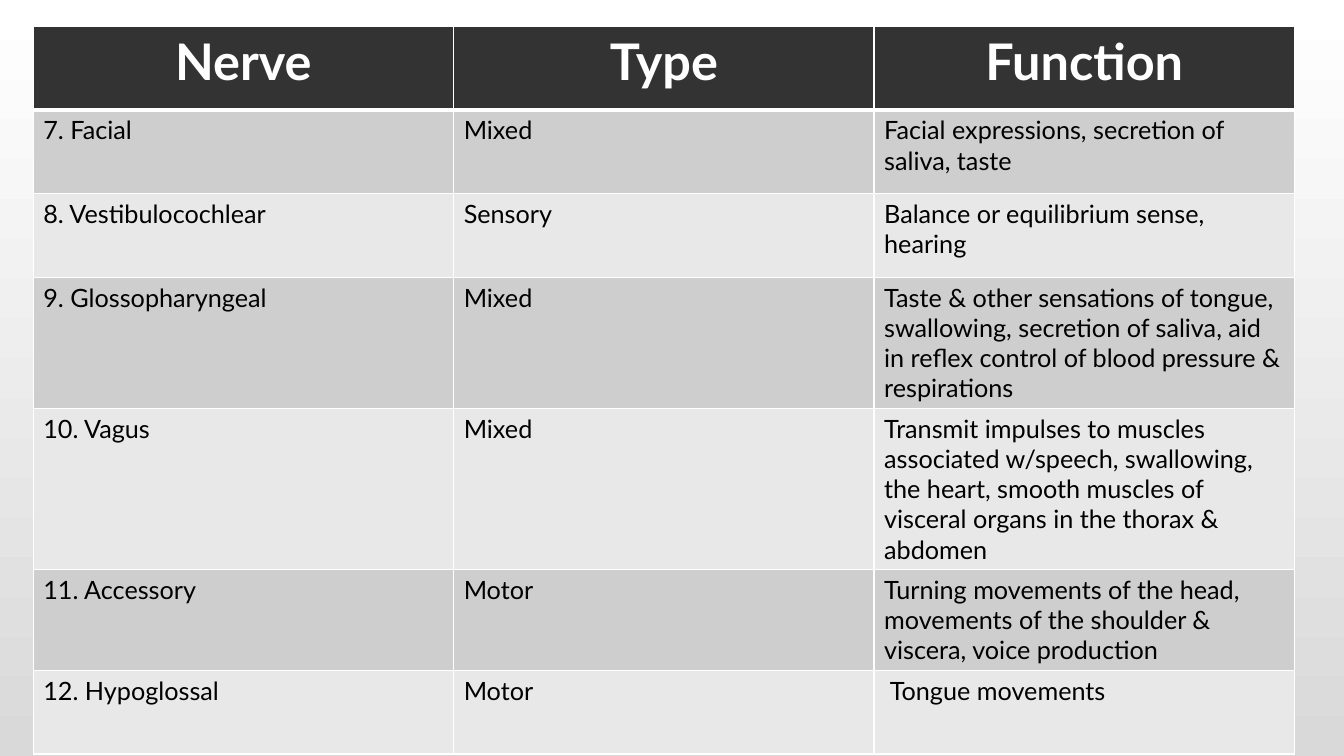
from dataclasses import dataclass

from pptx import Presentation
from pptx.dml.color import RGBColor
from pptx.enum.text import PP_ALIGN as Align
from pptx.oxml.ns import qn
from pptx.slide import Slide
from pptx.table import _Cell as Cell
from pptx.util import Inches, Pt
from lxml.etree import SubElement

COLORS = {
    "header": "333333",
    "odd_row": "CECECE",
    "even_row": "E8E8E8",
    "rule": "FFFFFF",
    "header_text": "FFFFFF",
    "body_text": "000000",
    "background_low": "D9D9D9",
    "background_high": "FFFFFF",
}
FONT = "Lato"
COLUMN_WIDTH = 4.17
HEADER_HEIGHT = 0.83
HEADINGS = ("Nerve", "Type", "Function")


@dataclass(frozen=True)
class Nerve:
    name: str
    kind: str
    function: str
    height: float = 0.83


@dataclass(frozen=True)
class CellStyle:
    fill: str
    text: str
    size: int
    bold: bool
    align: Align
    rules: dict[str, int]  # border tag to width in points


NERVES = (
    Nerve("7. Facial", "Mixed", "Facial expressions, secretion of saliva, taste"),
    Nerve("8. Vestibulocochlear", "Sensory", "Balance or equilibrium sense, hearing"),
    Nerve("9. Glossopharyngeal", "Mixed",
          "Taste & other sensations of tongue, swallowing, secretion of saliva, "
          "aid in reflex control of blood pressure & respirations", 1.2),
    Nerve("10. Vagus", "Mixed",
          "Transmit impulses to muscles associated w/speech, swallowing, the heart, "
          "smooth muscles of visceral organs in the thorax & abdomen", 1.48),
    Nerve("11. Accessory", "Motor",
          "Turning movements of the head, movements of the shoulder & viscera, "
          "voice production", 0.93),
    Nerve("12. Hypoglossal", "Motor", " Tongue movements"),
)

HEADER_STYLE = CellStyle("header", "header_text", 36, True, Align.CENTER,
                         {"lnL": 1, "lnR": 1, "lnT": 1, "lnB": 3})


def body_style(row: int) -> CellStyle:
    """Banded fill; the first body row shares the thick rule under the header."""
    return CellStyle("odd_row" if row % 2 else "even_row", "body_text", 18, False,
                     Align.LEFT, {"lnL": 1, "lnR": 1, "lnT": 3 if row == 1 else 1, "lnB": 1})


def rgb(name: str) -> RGBColor:
    return RGBColor.from_string(COLORS[name])


def paint_background(slide: Slide) -> None:
    fill = slide.background.fill
    fill.gradient()
    fill.gradient_angle = 90
    for stop, name in zip(fill.gradient_stops, ("background_low", "background_high")):
        stop.color.rgb = rgb(name)


def write_cell(cell: Cell, text: str, style: CellStyle) -> None:
    # Borders come before the fill in the cell properties
    properties = cell._tc.get_or_add_tcPr()
    for tag, width in style.rules.items():
        rule = SubElement(properties, qn(f"a:{tag}"), w=str(Pt(width)))
        solid = SubElement(rule, qn("a:solidFill"))
        SubElement(solid, qn("a:srgbClr"), val=COLORS["rule"])
    cell.fill.solid()
    cell.fill.fore_color.rgb = rgb(style.fill)

    paragraph = cell.text_frame.paragraphs[0]
    paragraph.alignment = style.align
    run = paragraph.add_run()
    run.text = text
    run.font.name = FONT
    run.font.size = Pt(style.size)
    run.font.bold = style.bold
    run.font.color.rgb = rgb(style.text)


def add_nerve_table(slide: Slide) -> None:
    heights = [HEADER_HEIGHT, *(nerve.height for nerve in NERVES)]
    table = slide.shapes.add_table(
        len(heights), len(HEADINGS), Inches(0.33), Inches(0.26),
        Inches(COLUMN_WIDTH * len(HEADINGS)), Inches(sum(heights))).table
    for column in table.columns:
        column.width = Inches(COLUMN_WIDTH)
    for row, height in zip(table.rows, heights):
        row.height = Inches(height)

    # Header row
    for cell, heading in zip(table.rows[0].cells, HEADINGS):
        write_cell(cell, heading, HEADER_STYLE)

    # One row per nerve
    for index, nerve in enumerate(NERVES, start=1):
        texts = (nerve.name, nerve.kind, nerve.function)
        for cell, text in zip(table.rows[index].cells, texts):
            write_cell(cell, text, body_style(index))


def main() -> None:
    deck = Presentation()
    deck.slide_width, deck.slide_height = Inches(13.33), Inches(7.5)
    slide = deck.slides.add_slide(deck.slide_layouts.get_by_name("Blank"))
    paint_background(slide)
    add_nerve_table(slide)
    deck.save("out.pptx")


if __name__ == "__main__":
    main()
